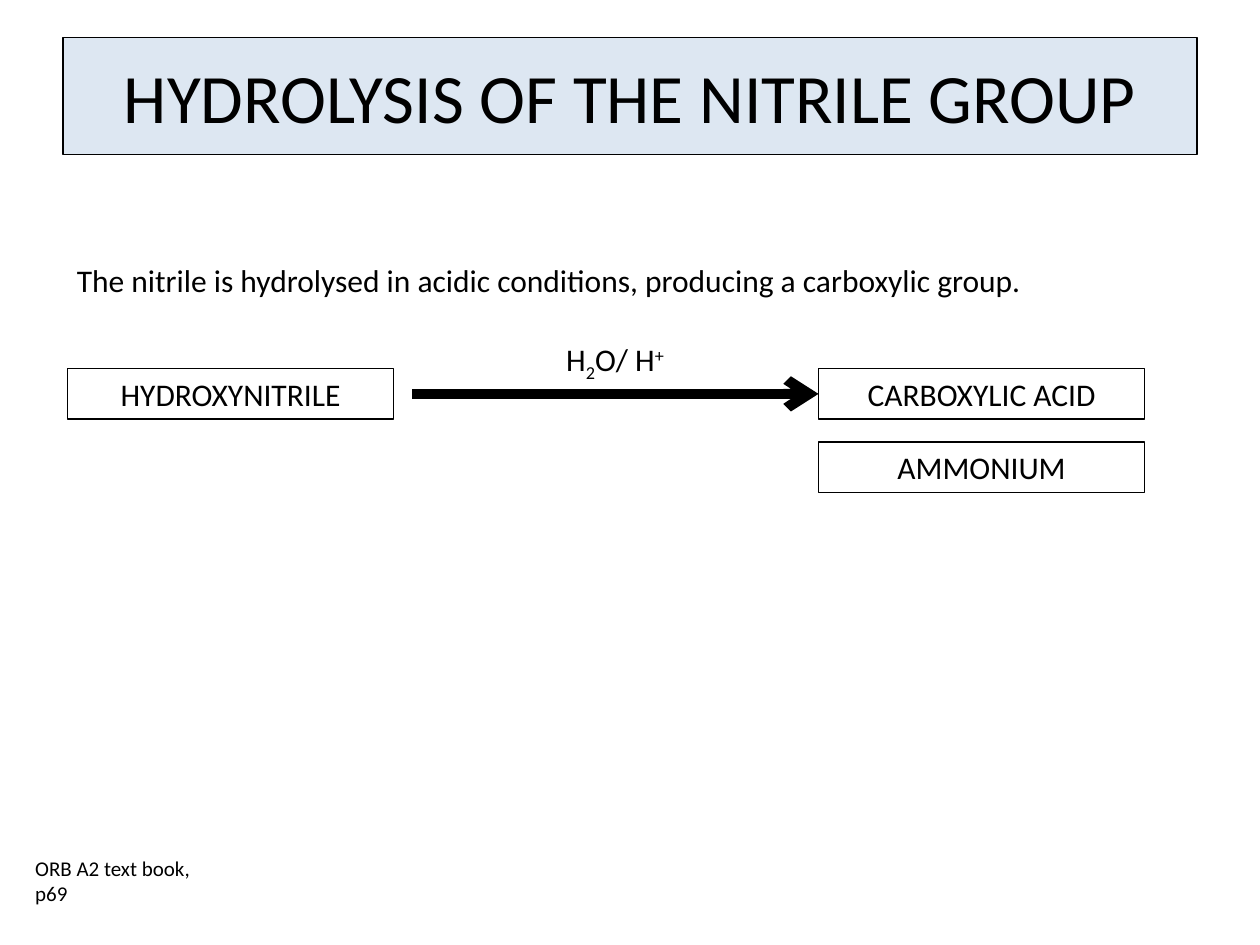
from lxml import etree
from pptx import Presentation
from pptx.dml.color import RGBColor
from pptx.enum.shapes import MSO_CONNECTOR, MSO_SHAPE
from pptx.enum.text import MSO_ANCHOR, MSO_AUTO_SIZE, PP_ALIGN
from pptx.oxml.ns import qn
from pptx.util import Cm, Pt

COLORS = {"ink": "000000", "banner": "4F81BD"}
FONT = "Calibri"
TITLE_ONLY = 5
RECTANGLE = MSO_SHAPE.RECTANGLE
STRAIGHT = MSO_CONNECTOR.STRAIGHT
LEFT, CENTER = PP_ALIGN.LEFT, PP_ALIGN.CENTER
MIDDLE, TOP = MSO_ANCHOR.MIDDLE, MSO_ANCHOR.TOP
NO_AUTOFIT = MSO_AUTO_SIZE.NONE

BOX_WIDTH, BOX_HEIGHT = 6.58, 1.02
REACTANT_LEFT, PRODUCT_LEFT = 1.36, 16.5
REACTION_TOP, PRODUCT_PITCH = 7.43, 1.48


def rgb(name):
    return RGBColor.from_string(COLORS[name])


def write_text(shape, parts, size, align=LEFT, anchor=TOP):
    frame = shape.text_frame
    frame_format = {"word_wrap": True, "auto_size": NO_AUTOFIT, "vertical_anchor": anchor}
    for attribute, value in frame_format.items():
        setattr(frame, attribute, value)
    paragraph = frame.paragraphs[0]
    paragraph.alignment = align
    for words, baseline in parts:
        run = paragraph.add_run()
        run.text = words
        for attribute, value in {"name": FONT, "size": Pt(size)}.items():
            setattr(run.font, attribute, value)
        run.font.color.rgb = rgb("ink")
        if baseline:
            run.font._element.set("baseline", str(baseline * 1000))


def outline(shape, width=0.75):
    shape.line.color.rgb = rgb("ink")
    shape.line.width = Pt(width)


def format_title(title, words):
    place = {"left": Cm(1.27), "top": Cm(0.76), "width": Cm(22.86), "height": Cm(2.36)}
    for attribute, value in place.items():
        setattr(title, attribute, value)
    title.fill.solid()
    title.fill.fore_color.rgb = rgb("banner")
    tint = title._element.spPr.find(qn("a:solidFill"))[0]
    etree.SubElement(tint, qn("a:alpha")).set("val", "19000")
    outline(title)
    write_text(title, [(words, 0)], 39.6, CENTER, MIDDLE)


def add_label(slide, place, parts, size, align=LEFT):
    label = slide.shapes.add_textbox(*map(Cm, place))
    write_text(label, parts, size, align)


def add_compound(slide, left, top, name):
    compound = slide.shapes.add_shape(
        RECTANGLE, Cm(left), Cm(top), Cm(BOX_WIDTH), Cm(BOX_HEIGHT))
    compound.shadow.inherit = False
    compound.fill.background()
    outline(compound)
    write_text(compound, [(name, 0)], 18, CENTER)


def add_reaction_arrow(slide, start, end, height):
    arrow = slide.shapes.add_connector(STRAIGHT, Cm(start), Cm(height), Cm(end), Cm(height))
    outline(arrow, 5.75)
    etree.SubElement(arrow.line._get_or_add_ln(), qn("a:tailEnd")).set("type", "arrow")
    etree.SubElement(arrow._element.spPr, qn("a:effectLst"))


def main():
    presentation = Presentation()
    presentation.slide_width, presentation.slide_height = Cm(25.4), Cm(19.05)
    slide = presentation.slides.add_slide(presentation.slide_layouts[TITLE_ONLY])

    format_title(slide.shapes.title, "HYDROLYSIS OF THE NITRILE GROUP")
    add_label(slide, (0.46, 17.12, 4.04, 1.28), [("ORB A2 text book, p69", 0)], 12)
    add_label(
        slide, (1.3, 5.13, 22.6, 1.02),
        [("The nitrile is hydrolysed in acidic conditions, producing a carboxylic group.", 0)], 18)

    add_compound(slide, REACTANT_LEFT, REACTION_TOP, "HYDROXYNITRILE")
    add_reaction_arrow(slide, 8.31, PRODUCT_LEFT, REACTION_TOP + BOX_HEIGHT / 2)
    conditions = [("H", 0), ("2", -25), ("O/ H", 0), ("+", 30)]
    add_label(slide, (10.9, 6.73, 3, 1.02), conditions, 18, CENTER)
    for row, product in enumerate(("CARBOXYLIC ACID", "AMMONIUM")):
        add_compound(slide, PRODUCT_LEFT, REACTION_TOP + row * PRODUCT_PITCH, product)

    presentation.save("out.pptx")


if __name__ == "__main__":
    main()
